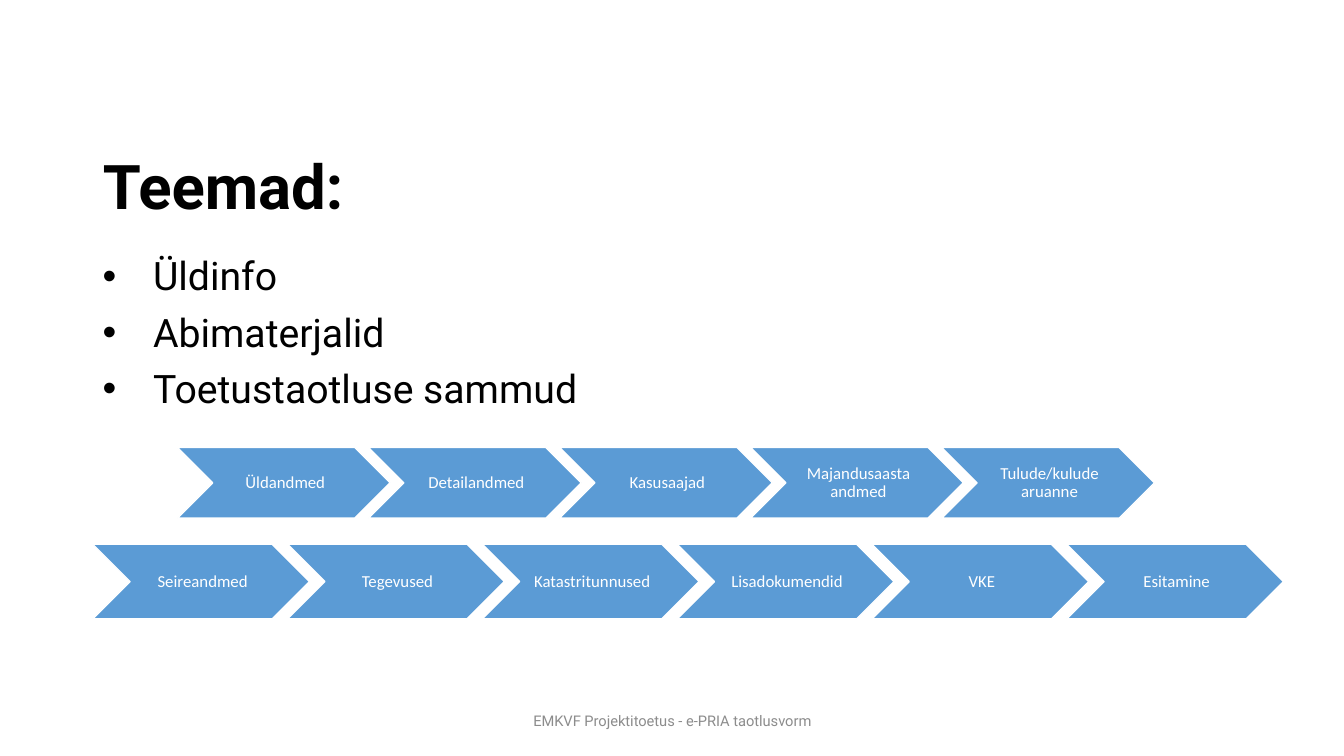
from dataclasses import dataclass

from lxml import etree
from pptx import Presentation
from pptx import util as u
from pptx.dml.color import RGBColor
from pptx.enum import shapes, text
from pptx.oxml import ns

BLACK = RGBColor(0x00, 0x00, 0x00)
WHITE = RGBColor(0xFF, 0xFF, 0xFF)
GREY = RGBColor(0x8C, 0x8C, 0x8C)
BLUE = RGBColor(0x5B, 0x9B, 0xD5)

TOPICS = ("Üldinfo", "Abimaterjalid", "Toetustaotluse sammud")


@dataclass(frozen=True)
class StepRow:
    left: float
    top: float
    width: float
    height: float
    pitch: float
    steps: tuple[str, ...]


STEP_ROWS = (
    StepRow(1.76, 4.44, 2.11, 0.7, 1.895,
            ("Üldandmed", "Detailandmed", "Kasusaajad",
             "Majandusaasta andmed", "Tulude/kulude aruanne")),
    StepRow(0.92, 5.4, 2.15, 0.74, 1.932,
            ("Seireandmed", "Tegevused", "Katastritunnused",
             "Lisadokumendid", "VKE", "Esitamine")),
)


def add_run(p, words: str, font: str, size: float, color: RGBColor,
            bold: bool = False) -> None:
    r = p.add_run()
    r.text = words
    r.font.name = font
    r.font.size = u.Pt(size)
    r.font.bold = bold
    r.font.color.rgb = color


def add_box(s, left: float, top: float, width: float, height: float):
    sp = s.shapes.add_textbox(u.Inches(left), u.Inches(top),
                              u.Inches(width), u.Inches(height))
    sp.text_frame.word_wrap = True
    return sp.text_frame


def set_bullet(p) -> None:
    """Give the paragraph a round bullet with a half-inch hanging indent."""
    pPr = p._p.get_or_add_pPr()
    pPr.set("marL", str(u.Inches(0.5)))
    pPr.set("indent", str(u.Inches(-0.5)))
    etree.SubElement(pPr, ns.qn("a:buFont")).set("typeface", "Arial")
    etree.SubElement(pPr, ns.qn("a:buChar")).set("char", "•")


def add_title(s) -> None:
    sp = s.shapes.title
    sp.left, sp.top = u.Inches(0.92), u.Inches(1.16)
    sp.width, sp.height = u.Inches(11.5), u.Inches(1.45)
    tf = sp.text_frame
    tf.vertical_anchor = text.MSO_ANCHOR.MIDDLE
    p = tf.paragraphs[0]
    p.alignment = text.PP_ALIGN.LEFT
    p.line_spacing = 0.9
    add_run(p, "Teemad:", "Roboto", 44, BLACK, bold=True)


def add_topics(s) -> None:
    tf = add_box(s, 0.92, 2.5, 11.5, 1.8)
    for i, topic in enumerate(TOPICS):
        p = tf.add_paragraph() if i else tf.paragraphs[0]
        set_bullet(p)
        p.line_spacing = 0.9
        p.space_before = u.Pt(10 if i else 0)
        add_run(p, topic, "Roboto", 28, BLACK)


def add_step_row(s, row: StepRow) -> None:
    group = s.shapes.add_group_shape()
    for i, step in enumerate(row.steps):
        sp = group.shapes.add_shape(
            shapes.MSO_SHAPE.CHEVRON,
            u.Inches(row.left + i * row.pitch), u.Inches(row.top),
            u.Inches(row.width), u.Inches(row.height))
        sp.shadow.inherit = False
        sp.fill.solid()
        sp.fill.fore_color.rgb = BLUE
        sp.line.color.rgb = WHITE
        sp.line.width = u.Pt(1)
        tf = sp.text_frame
        tf.word_wrap = True
        tf.vertical_anchor = text.MSO_ANCHOR.MIDDLE
        tf.margin_left = u.Inches(0.05)
        tf.margin_top = tf.margin_right = tf.margin_bottom = u.Inches(0.02)
        p = tf.paragraphs[0]
        p.alignment = text.PP_ALIGN.CENTER
        p.line_spacing = 0.9
        add_run(p, step, "Calibri", 12, WHITE)


def add_footer(s) -> None:
    tf = add_box(s, 4.42, 6.95, 4.5, 0.4)
    tf.vertical_anchor = text.MSO_ANCHOR.MIDDLE
    p = tf.paragraphs[0]
    p.alignment = text.PP_ALIGN.CENTER
    add_run(p, "EMKVF Projektitoetus - e-PRIA taotlusvorm", "Roboto", 10.5, GREY)


def main() -> None:
    prs = Presentation()
    prs.slide_width, prs.slide_height = u.Inches(13.33), u.Inches(7.5)
    s = prs.slides.add_slide(prs.slide_layouts.get_by_name("Title Only"))
    add_title(s)
    add_topics(s)
    for row in STEP_ROWS:
        add_step_row(s, row)
    add_footer(s)
    prs.save("out.pptx")


if __name__ == "__main__":
    main()
